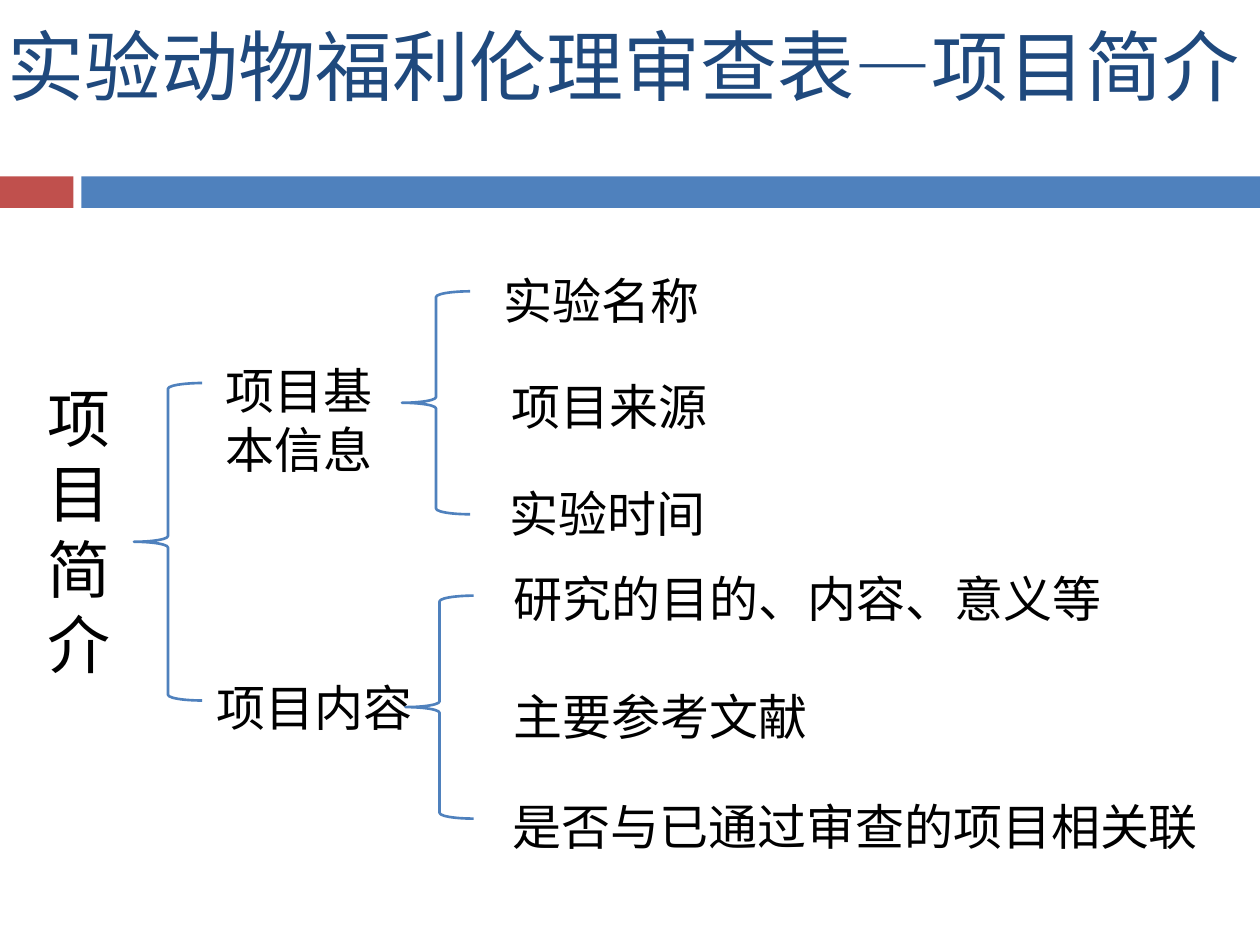
from pptx import Presentation
from pptx.util import Pt
from pptx.dml.color import RGBColor
from pptx.enum.shapes import MSO_SHAPE as Preset
from pptx.enum.text import MSO_ANCHOR as Anchor, PP_ALIGN as Align

BLUE, RED, NAVY, BLACK = "4F81BD", "C0504D", "1F497D", "000000"


def color(value):
    return RGBColor.from_string(value)


def add_text(text, left, top, width, height, size=28, font="Calibri",
             ink=BLACK, anchor=Anchor.TOP):
    box = slide.shapes.add_textbox(Pt(left), Pt(top), Pt(width), Pt(height))
    frame = box.text_frame
    frame.word_wrap = True
    frame.vertical_anchor = anchor
    para = frame.paragraphs[0]
    para.alignment = Align.LEFT
    span = para.add_run()
    span.text = text
    span.font.size = Pt(size)
    span.font.name = font
    span.font.color.rgb = color(ink)


deck = Presentation()
deck.slide_width, deck.slide_height = Pt(720), Pt(540)
slide = deck.slides.add_slide(deck.slide_layouts[6])

# Two-colour band under the title
for left, width, fill in [(0, 42, RED), (46.5, 673.5, BLUE)]:
    bar = slide.shapes.add_shape(
        Preset.RECTANGLE, Pt(left), Pt(100.8), Pt(width), Pt(18))
    bar.shadow.inherit = False
    bar.fill.solid()
    bar.fill.fore_color.rgb = color(fill)
    bar.line.fill.background()

# Title
add_text("实验动物福利伦理审查表—项目简介", -2.9, -2.2, 736.6, 77.8,
         size=44, font="Cabin", ink=NAVY, anchor=Anchor.MIDDLE)

# Root of the tree: the narrow box stacks one character per line
add_text("项目简介", 20.2, 213.1, 30.2, 181.4, size=36)

# Branches and leaves
for text, left, top, width, height in [
    ("项目基本信息", 121.7, 202.3, 123.1, 74.9),
    ("项目内容", 116.6, 383.8, 128.2, 41),
    ("实验名称", 280.8, 151.2, 128.2, 41),
    ("项目来源", 285.1, 211.7, 128.2, 41),
    ("实验时间", 284, 272.9, 128.2, 41),
    ("研究的目的、内容、意义等", 286.6, 321.1, 360, 41),
    ("主要参考文献", 286.6, 388.8, 360, 41),
    ("是否与已通过审查的项目相关联", 286, 451.4, 416.9, 41),
]:
    add_text(text, left, top, width, height)

# Braces joining each level to the next
for left, top, height in [(76.5, 218.9, 181.4), (229.7, 166.5, 127.4),
                          (231.7, 340.4, 127.4)]:
    brace = slide.shapes.add_shape(
        Preset.LEFT_BRACE, Pt(left), Pt(top), Pt(39), Pt(height))
    brace.shadow.inherit = False
    brace.fill.background()
    brace.line.color.rgb = color(BLUE)
    brace.line.width = Pt(1.5)

deck.save("out.pptx")
